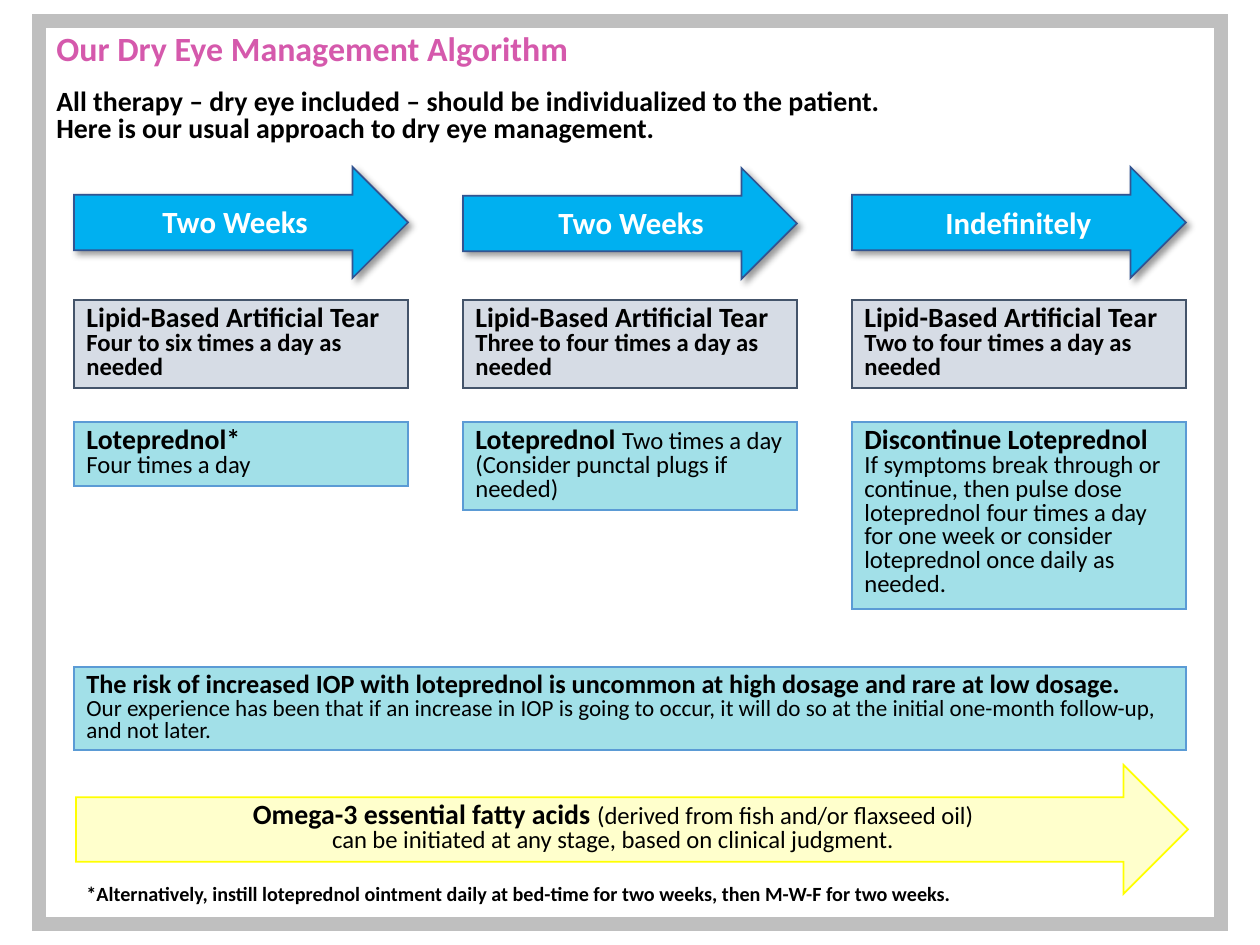
from lxml import etree
from pptx import Presentation
from pptx import util as u
from pptx.dml.color import RGBColor
from pptx.enum import shapes, text
from pptx.oxml import ns

BLACK = RGBColor(0, 0, 0)
WHITE = RGBColor(255, 255, 255)
PINK = RGBColor(0xD5, 0x59, 0xAC)
BLUE = RGBColor(0x00, 0xB0, 0xF0)
NAVY = RGBColor(0x32, 0x54, 0x91)
GREY = RGBColor(0xBF, 0xBF, 0xBF)
PALE = RGBColor(0xD6, 0xDC, 0xE5)
SLATE = RGBColor(0x44, 0x54, 0x6A)
AQUA = RGBColor(0xA2, 0xE0, 0xE8)
SKY = RGBColor(0x5B, 0x9B, 0xD5)
CREAM = RGBColor(0xFF, 0xFF, 0xCC)
YELLOW = RGBColor(0xFF, 0xFF, 0x00)

RECT = shapes.MSO_SHAPE.RECTANGLE
ARROW = shapes.MSO_SHAPE.RIGHT_ARROW
FONT = "Calibri"
HEAD, BODY = 15.9, 14.1
LEFT, STEP, WIDE = 74, 389, 334  # column grid in px
FULL = 2 * STEP + WIDE

# A paragraph is a list of runs: (words, size, bold)
TITLE = [[("Our Dry Eye Management Algorithm", 19.4, True)]]
INTRO = [
    [("All therapy – dry eye included – should be individualized to the patient.", HEAD, True)],
    [("Here is our usual approach to dry eye management.", HEAD, True)],
]
STAGES = [
    {"time": "Two Weeks", "top": 167, "label": (150, 197, 184),
     "tear": "Four to six times a day as needed", "drop": 64,
     "drug": [[("Loteprednol*", HEAD, True)],
              [("Four times a day", BODY, False)]]},
    {"time": "Two Weeks", "top": 168, "label": (546, 198, 184),
     "tear": "Three to four times a day as needed", "drop": 88,
     "drug": [[("Loteprednol ", HEAD, True), ("Two times a day", BODY, False)],
              [("(Consider punctal plugs if needed)", BODY, False)]]},
    {"time": "Indefinitely", "top": 167, "label": (933, 198, 184),
     "tear": "Two to four times a day as needed", "drop": 187,
     "drug": [[("Discontinue Loteprednol", HEAD, True)],
              [("If symptoms break through or continue, then pulse dose ", BODY, False),
               ("loteprednol ", 14, False),
               ("four times a day for one week or consider loteprednol "
                "once daily as needed.", BODY, False)]]},
]
RISK = [
    [("The risk of increased IOP with loteprednol is uncommon at high dosage "
      "and rare at low dosage.", 15, True)],
    [("Our experience has been that if an increase in IOP is going to occur, it will "
      "do so at the initial one-month follow-up, and not later.", 13.2, False)],
]
OMEGA = [[("Omega-3 essential fatty acids ", HEAD, True),
          ("(derived from fish and/or flaxseed oil) can be initiated at any stage, "
           "based on clinical judgment.", BODY, False)]]
NOTE = [[("*Alternatively, instill loteprednol ointment daily at bed-time for two weeks, "
          "then M-W-F for two weeks.", 11.5, True)]]


def px(*vals):
    return [u.Emu(round(v * 914400 / 126)) for v in vals]


def write(shape, paras, color=BLACK, gap=0.8, align=text.PP_ALIGN.LEFT):
    frame = shape.text_frame
    frame.word_wrap = True
    frame.vertical_anchor = text.MSO_ANCHOR.TOP
    for i, runs in enumerate(paras):
        para = frame.paragraphs[0] if i == 0 else frame.add_paragraph()
        para.alignment = align
        para.line_spacing = gap
        for words, size, bold in runs:
            run = para.add_run()
            run.text = words
            font = run.font
            font.name, font.size, font.bold = FONT, u.Pt(size), bold
            font.color.rgb = color


def label(slide, box, paras, **style):
    write(slide.shapes.add_textbox(*px(*box)), paras, **style)


def draw(slide, kind, box, fill, line, width):
    shape = slide.shapes.add_shape(kind, *px(*box))
    shape.shadow.inherit = False
    if fill is None:
        shape.fill.background()
    else:
        shape.fill.solid()
        shape.fill.fore_color.rgb = fill
    shape.line.color.rgb = line
    shape.line.width = u.Pt(width)
    join = etree.SubElement(shape.line._get_or_add_ln(), ns.qn("a:miter"))
    join.set("lim", "800000")
    return shape


def shade(shape):
    """Add a soft shadow to the lower right."""
    effects = shape._element.spPr.find(ns.qn("a:effectLst"))
    outer = etree.SubElement(effects, ns.qn("a:outerShdw"), blurRad=str(u.Pt(4)),
                             dist=str(u.Pt(3)), dir="2700000", algn="tl", rotWithShape="0")
    color = etree.SubElement(outer, ns.qn("a:srgbClr"), val="000000")
    etree.SubElement(color, ns.qn("a:alpha"), val="40000")


def main():
    deck = Presentation()
    deck.slide_width, deck.slide_height = px(1260, 945)
    slide = deck.slides.add_slide(deck.slide_layouts[6])

    draw(slide, RECT, (39, 21, 1182, 903), None, GREY, 8.25)
    label(slide, (44, 21, 560, 54), TITLE, color=PINK, gap=1)
    label(slide, (44, 84, 1162, 67), INTRO)

    for i, stage in enumerate(STAGES):
        x = LEFT + i * STEP
        shade(draw(slide, ARROW, (x, stage["top"], WIDE, 111), BLUE, NAVY, 1))
        label(slide, (*stage["label"], 50), [[(stage["time"], 17.6, True)]],
              color=WHITE, gap=1)
        tear = [[("Lipid-Based Artificial Tear", HEAD, True)], [(stage["tear"], BODY, True)]]
        write(draw(slide, RECT, (x, 300, WIDE, 88), PALE, SLATE, 0.75), tear)
        write(draw(slide, RECT, (x, 422, WIDE, stage["drop"]), AQUA, SKY, 0.75), stage["drug"])

    write(draw(slide, RECT, (LEFT, 667, FULL, 83), AQUA, SKY, 0.75), RISK)
    draw(slide, ARROW, (LEFT + 2, 765, FULL, 129), CREAM, YELLOW, 1)
    label(slide, (232, 797, 762, 64), OMEGA, align=text.PP_ALIGN.CENTER)
    label(slide, (LEFT, 875, 1020, 36), NOTE, gap=1)
    deck.save("out.pptx")


if __name__ == "__main__":
    main()
